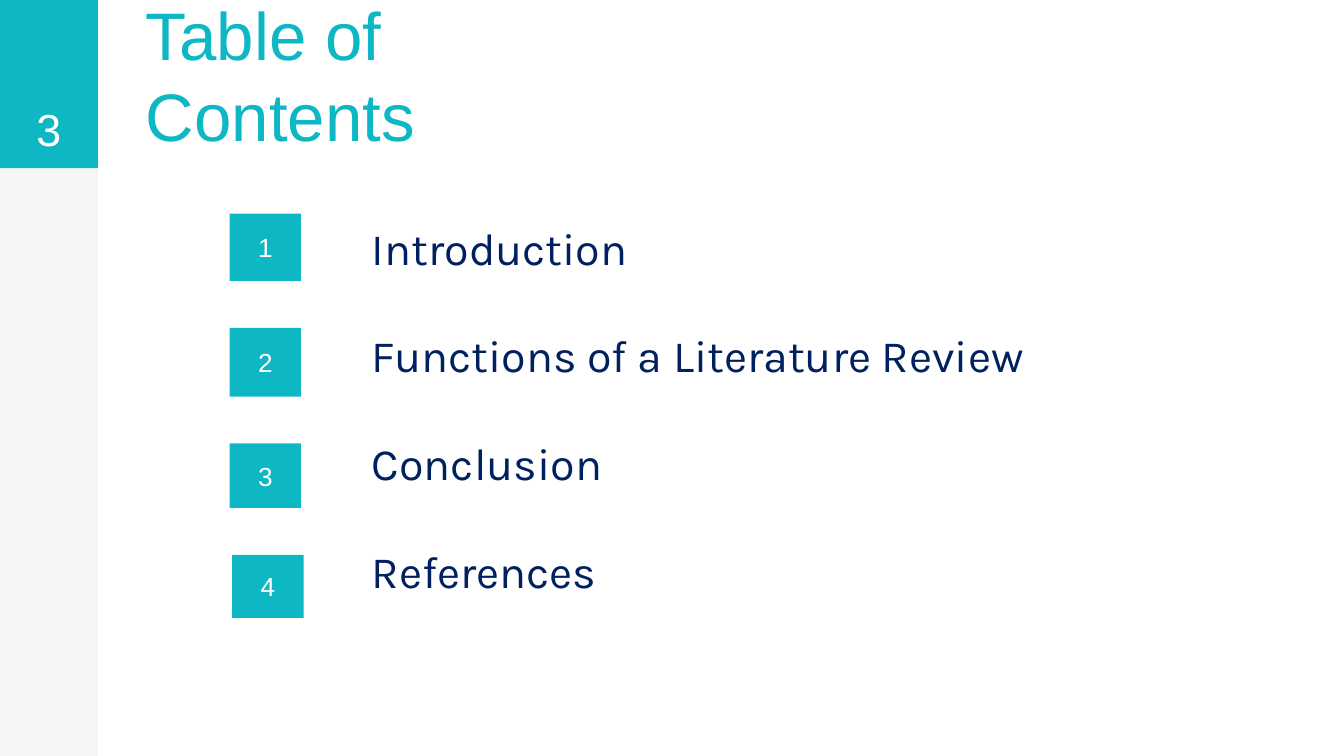
from pptx import Presentation
from pptx.dml.color import RGBColor as Rgb
from pptx.enum.shapes import MSO_SHAPE as Form
from pptx.enum.text import MSO_ANCHOR as Anchor, PP_ALIGN as Align
from pptx.util import Cm, Pt

INK = {"teal": "0DB7C4", "grey": "F6F6F6", "navy": "002060", "white": "FFFFFF"}
BAR = 1.85   # width of the side bar
HEAD = 3.18  # height of the header band

# Left, top and height of each number tile
TILES = [(4.34, 4.04, 1.27), (4.34, 6.2, 1.3), (4.34, 8.38, 1.22), (4.39, 10.49, 1.19)]
TOPICS = ["Introduction", "Functions of a Literature Review", "Conclusion", "References"]


def style(para, size, color, face="Arial", align=Align.LEFT):
    para.alignment = align
    font = para.font
    font.size, font.name = Pt(size), face
    font.color.rgb = Rgb.from_string(INK[color])


def add_box(slide, x, y, w, h, color):
    box = slide.shapes.add_shape(Form.RECTANGLE, Cm(x), Cm(y), Cm(w), Cm(h))
    box.shadow.inherit = False
    box.fill.solid()
    box.fill.fore_color.rgb = Rgb.from_string(INK[color])
    box.line.fill.background()
    return box


def add_tile(slide, x, y, h, label):
    frame = add_box(slide, x, y, 1.35, h, "teal").text_frame
    frame.vertical_anchor = Anchor.MIDDLE
    frame.text = label
    style(frame.paragraphs[0], 14, "white", align=Align.CENTER)


def add_text(slide, x, y, w, h):
    frame = slide.shapes.add_textbox(Cm(x), Cm(y), Cm(w), Cm(h)).text_frame
    frame.word_wrap = True
    return frame


def add_label(slide, x, w, text, size, color, align=Align.LEFT):
    frame = add_text(slide, x, 0, w, HEAD)
    frame.vertical_anchor = Anchor.BOTTOM
    frame.margin_left = frame.margin_right = Cm(0.25)
    frame.margin_top = frame.margin_bottom = Cm(0.25)
    frame.text = text
    style(frame.paragraphs[0], size, color, align=align)


def add_list(slide, topics):
    frame = add_text(slide, 6.78, 4.04, 18.9, 7.44)
    frame.text = "\n".join(topics)
    for para in frame.paragraphs:
        style(para, 24, "navy", "Karla")
        para.space_after = Pt(29)


def main():
    deck = Presentation()
    deck.slide_width, deck.slide_height = Cm(25.4), Cm(14.29)
    slide = deck.slides.add_slide(deck.slide_layouts[6])

    # Side bar and header band
    add_box(slide, 0, 0, BAR, 14.29, "grey")
    add_box(slide, 0, 0, BAR, HEAD, "teal")

    # Title and page number
    add_label(slide, 2.51, 9.88, "Table of Contents", 36, "teal")
    add_label(slide, 0, BAR, "3", 24, "white", Align.CENTER)

    # Topics with their number tiles
    add_list(slide, TOPICS)
    for num, (x, y, h) in enumerate(TILES, 1):
        add_tile(slide, x, y, h, str(num))

    deck.save("out.pptx")


if __name__ == "__main__":
    main()
